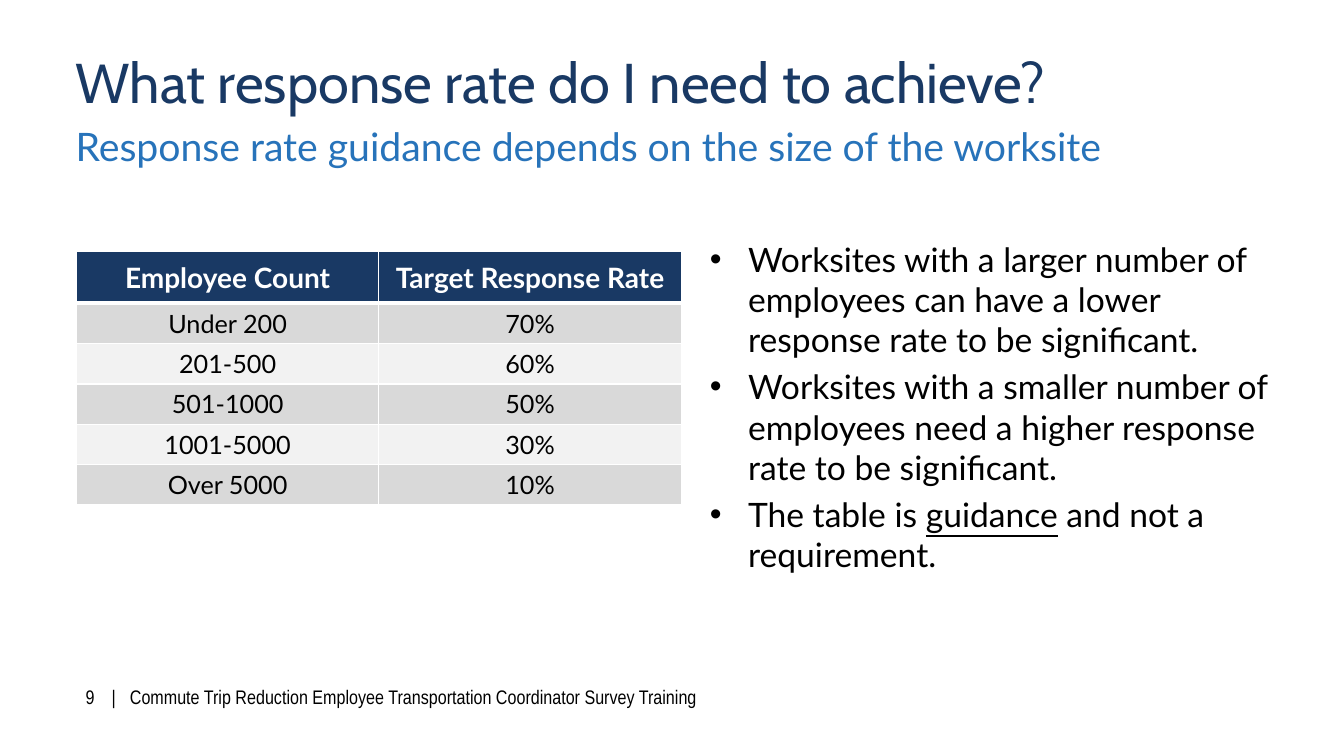
import pptx
import pptx.util
import pptx.dml.color
import pptx.enum.text
import pptx.oxml.ns
import lxml.etree

COLORS = {"navy": "193964", "blue": "2773BA", "black": "000000",
          "white": "FFFFFF", "gray": "D9D9D9", "pale": "F2F2F2"}
GRID_COLUMNS, GRID_ROWS = 160, 90
LEFT_EDGE, FULL_WIDTH = 9, 142
ALIGN = pptx.enum.text.PP_ALIGN
ANCHOR = pptx.enum.text.MSO_ANCHOR


def add_xml(parent, tag, **attributes):
    return lxml.etree.SubElement(parent, pptx.oxml.ns.qn(tag), attributes)


class SlideBuilder:
    """Holds the text style and the current slide; lengths are grid units."""
    heading_font, body_font, footer_font = "Cabin", "Lato", "Arial Narrow"

    def __init__(self, presentation):
        self.column = presentation.slide_width / GRID_COLUMNS
        self.row = presentation.slide_height / GRID_ROWS
        self.slide = presentation.slides.add_slide(presentation.slide_layouts[3])

    def box(self, left, top, width, height):
        return (round(left * self.column), round(top * self.row),
                round(width * self.column), round(height * self.row))

    def style(self, paragraph, size, color, font=None, bold=False, align=ALIGN.LEFT):
        paragraph.alignment = align
        paragraph.font.size = pptx.util.Pt(size)
        paragraph.font.name = font or self.body_font
        paragraph.font.bold = bold
        paragraph.font.color.rgb = pptx.dml.color.RGBColor.from_string(COLORS[color])

    def placeholder(self, index, *area):
        shape = self.slide.placeholders[index]
        shape.left, shape.top, shape.width, shape.height = self.box(*area)
        frame = shape.text_frame
        frame.margin_left = frame.margin_right = frame.margin_top = frame.margin_bottom = 0
        frame.word_wrap = True
        frame.auto_size = pptx.enum.text.MSO_AUTO_SIZE.NONE
        return frame

    def title(self, text, *area):
        frame = self.placeholder(0, *area)
        frame.vertical_anchor = ANCHOR.MIDDLE
        frame.text = text
        self.style(frame.paragraphs[0], 40, "navy", self.heading_font)

    def subtitle(self, text, *area):
        frame = self.placeholder(1, *area)
        frame.text = text
        paragraph = frame.paragraphs[0]
        paragraph.space_before = pptx.util.Pt(0)
        properties = paragraph._p.get_or_add_pPr()
        properties.set("marL", "0")
        properties.set("indent", "0")
        add_xml(properties, "a:buNone")
        self.style(paragraph, 28, "blue")

    def bullets(self, items, *area):
        """Each item is a list of (text, underlined) runs."""
        frame = self.placeholder(2, *area)
        indent = pptx.util.Inches(0.38)
        for number, runs in enumerate(items):
            paragraph = frame.add_paragraph() if number else frame.paragraphs[0]
            paragraph.space_before = pptx.util.Pt(4.8 if number else 0)
            properties = paragraph._p.get_or_add_pPr()
            properties.set("marL", str(indent))
            properties.set("indent", str(-indent))
            add_xml(properties, "a:buFont", typeface="Arial")
            add_xml(properties, "a:buChar", char="•")
            self.style(paragraph, 24, "black")
            for text, underlined in runs:
                run = paragraph.add_run()
                run.text = text
                if underlined:
                    run.font.underline = True

    def border(self, cell, side, points):
        line = add_xml(cell._tc.get_or_add_tcPr(), f"a:ln{side}",
                       w=str(pptx.util.Pt(points)))
        add_xml(add_xml(line, "a:solidFill"), "a:srgbClr", val=COLORS["white"])

    def table(self, rows, left, top, width, header_height, row_height):
        height = header_height + row_height * (len(rows) - 1)
        table = self.slide.shapes.add_table(
            len(rows), len(rows[0]), *self.box(left, top, width, height)).table
        for row_index, values in enumerate(rows):
            header = row_index == 0
            table.rows[row_index].height = round(
                (header_height if header else row_height) * self.row)
            fill = "navy" if header else ("gray" if row_index % 2 else "pale")
            for column_index, value in enumerate(values):
                cell = table.cell(row_index, column_index)
                cell.text = value
                cell.vertical_anchor = ANCHOR.MIDDLE if header else ANCHOR.TOP
                self.style(cell.text_frame.paragraphs[0], 20 if header else 18,
                           "white" if header else "black",
                           bold=header, align=ALIGN.CENTER)
                # A thick rule divides the header from the body
                for side, points in (("L", 1), ("R", 1),
                                     ("T", 3 if row_index == 1 else 1),
                                     ("B", 3 if header else 1)):
                    self.border(cell, side, points)
                cell.fill.solid()
                cell.fill.fore_color.rgb = pptx.dml.color.RGBColor.from_string(COLORS[fill])

    def footer(self, parts, tab_stops, *area):
        frame = self.slide.shapes.add_textbox(*self.box(*area)).text_frame
        frame.word_wrap = True
        paragraph = frame.paragraphs[0]
        paragraph.add_run().text = "\t".join(parts)
        tabs = add_xml(paragraph._p.get_or_add_pPr(), "a:tabLst")
        for stop in tab_stops:
            add_xml(tabs, "a:tab", pos=str(pptx.util.Inches(stop)), algn="l")
        self.style(paragraph, 14, "black", self.footer_font)


def main():
    presentation = pptx.Presentation()
    presentation.slide_width = pptx.util.Inches(13.33)
    presentation.slide_height = pptx.util.Inches(7.5)
    builder = SlideBuilder(presentation)

    # Headings
    builder.title("What response rate do I need to achieve?",
                  LEFT_EDGE, 5.3, FULL_WIDTH, 8.8)
    builder.subtitle("Response rate guidance depends on the size of the worksite",
                     LEFT_EDGE, 14.6, FULL_WIDTH, 5.6)

    # Target rates and explanation
    builder.table([("Employee Count", "Target Response Rate"),
                   ("Under 200", "70%"),
                   ("201-500", "60%"),
                   ("501-1000", "50%"),
                   ("1001-5000", "30%"),
                   ("Over 5000", "10%")],
                  9.1, 29.9, 72, 6.2, 4.8)
    builder.bullets([
        [("Worksites with a larger number of employees can have a lower "
          "response rate to be significant.", False)],
        [("Worksites with a smaller number of employees need a higher "
          "response rate to be significant.", False)],
        [("The table is ", False), ("guidance", True),
         (" and not a requirement.", False)],
    ], 84.5, 28.4, 66.5, 45.6)

    # Footer
    builder.footer(("9", "|", "Commute Trip Reduction Employee Transportation "
                    "Coordinator Survey Training"),
                   (0.26, 0.44), LEFT_EDGE, 81, 138, 4.4)
    presentation.save("out.pptx")


if __name__ == "__main__":
    main()
